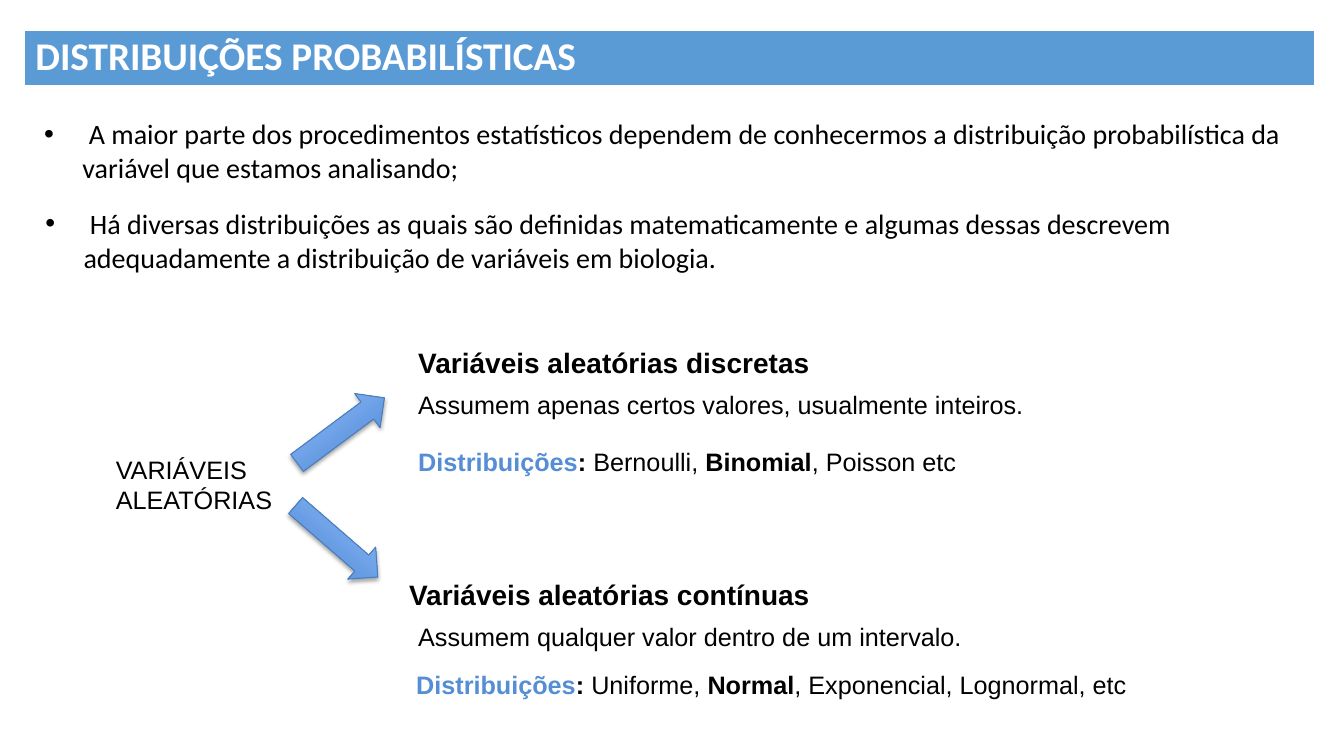
"""Build a slide that sorts random variables into discrete and continuous ones."""
from dataclasses import dataclass

import pptx
import pptx.dml.color
import pptx.enum.dml
import pptx.enum.shapes
import pptx.enum.text
import pptx.oxml
import pptx.oxml.ns
import pptx.util


@dataclass(frozen=True)
class Theme:
    """Colours, fonts and type sizes of the slide."""
    black: str = "000000"
    white: str = "FFFFFF"
    bar: str = "5B9BD5"
    label: str = "558ED5"
    edge: str = "4A7EBB"
    light: str = "9BC1FF"
    dark: str = "3F80CD"
    sans: str = "Arial"
    human: str = "Calibri"
    title: int = 28
    head: int = 20
    body: int = 18


THEME = Theme()
WIDTH = pptx.util.Inches(13.33)
HEIGHT = pptx.util.Inches(7.5)
SHADOW = (
    '<a:outerShdw xmlns:a="http://schemas.openxmlformats.org/drawingml/2006/main"'
    ' blurRad="39370" dist="22860" dir="5400000" rotWithShape="0">'
    '<a:srgbClr val="000000"><a:alpha val="35000"/></a:srgbClr></a:outerShdw>'
)


def paint(code):
    """Return the colour of a hex code."""
    return pptx.dml.color.RGBColor.from_string(code)


def area(left, top, width, height):
    """Turn percentages of the slide into left, top, width and height."""
    sides = (WIDTH, HEIGHT, WIDTH, HEIGHT)
    return [pptx.util.Emu(round(side * share / 100))
            for side, share in zip(sides, (left, top, width, height))]


def style(run, size, face=THEME.sans, tint=THEME.black, bold=False):
    """Format one run."""
    run.font.size = pptx.util.Pt(size)
    run.font.name = face
    run.font.bold = bold
    run.font.color.rgb = paint(tint)


def add_text(slide, place, text, size=THEME.body, face=THEME.sans, bold=False):
    """Add a wrapped text box and return its paragraph."""
    frame = slide.shapes.add_textbox(*area(*place)).text_frame
    frame.word_wrap = True
    frame.text = text
    line = frame.paragraphs[0]
    for run in line.runs:
        style(run, size, face, bold=bold)
    return line


def add_title(slide, place, text):
    """Fill the title and shape it as a bar."""
    title = slide.shapes.title
    title.left, title.top, title.width, title.height = area(*place)
    title.fill.solid()
    title.fill.fore_color.rgb = paint(THEME.bar)
    title.line.color.rgb = paint(THEME.bar)
    title.line.width = pptx.util.Pt(0.75)
    frame = title.text_frame
    frame.text = text
    frame.auto_size = pptx.enum.text.MSO_AUTO_SIZE.NONE
    frame.vertical_anchor = pptx.enum.text.MSO_ANCHOR.MIDDLE
    line = frame.paragraphs[0]
    line.alignment = pptx.enum.text.PP_ALIGN.LEFT
    line.line_spacing = 0.9
    style(line.runs[0], THEME.title, THEME.human, THEME.white, True)


def add_bullet(slide, place, text):
    """Add a bullet with a hanging indent."""
    line = add_text(slide, place, text, THEME.head, THEME.human)
    props = line._p.get_or_add_pPr()
    indent = pptx.util.Inches(0.38)
    props.set("marL", str(indent))
    props.set("indent", str(-indent))
    for tag, key, value in (("a:buFont", "typeface", THEME.sans),
                            ("a:buChar", "char", "•")):
        mark = pptx.oxml.ns.qn(tag)
        props.makeelement(mark)
        child = pptx.oxml.parse_xml(
            f'<{tag} xmlns:a="http://schemas.openxmlformats.org/drawingml/2006/main"'
            f' {key}="{value}"/>')
        props.append(child)


def add_arrow(slide, place, turn):
    """Add a turned block arrow with a gradient and a soft shadow."""
    arrow = slide.shapes.add_shape(
        pptx.enum.shapes.MSO_SHAPE.RIGHT_ARROW, *area(*place))
    arrow.rotation = turn
    arrow.fill.gradient()
    arrow.fill.gradient_angle = 270
    for stop, tint in zip(arrow.fill.gradient_stops, (THEME.light, THEME.dark)):
        stop.color.rgb = paint(tint)
    arrow.line.color.rgb = paint(THEME.edge)
    arrow.line.width = pptx.util.Pt(0.75)
    arrow.shadow.inherit = False
    effects = arrow._element.spPr.find(pptx.oxml.ns.qn("a:effectLst"))
    effects.append(pptx.oxml.parse_xml(SHADOW))


def add_kinds(slide, place, before, key, after):
    """Add a labelled list of distributions with one name in bold."""
    line = add_text(slide, place, "Distribuições", bold=True)
    line.runs[0].font.color.rgb = paint(THEME.label)
    for text, bold in ((": ", True), (before, False), (key, True), (after, False)):
        run = line.add_run()
        run.text = text
        style(run, THEME.body, bold=bold)


def main():
    """Build and save the slide."""
    deck = pptx.Presentation()
    deck.slide_width, deck.slide_height = WIDTH, HEIGHT
    slide = deck.slides.add_slide(deck.slide_layouts[5])

    add_title(slide, (1.88, 4.13, 95.87, 7.07), "DISTRIBUIÇÕES PROBABILÍSTICAS")
    add_bullet(slide, (2.55, 14.8, 95.2, 10.27),
               " A maior parte dos procedimentos estatísticos dependem de conhecermos"
               " a distribuição probabilística da variável que estamos analisando;")
    add_bullet(slide, (2.63, 26.67, 95.2, 10.27),
               " Há diversas distribuições as quais são definidas matematicamente e"
               " algumas dessas descrevem adequadamente a distribuição de variáveis"
               " em biologia.")

    add_text(slide, (7.88, 59.47, 16.28, 9.47), "VARIÁVEIS ALEATÓRIAS")
    add_arrow(slide, (21.3, 54.13, 8.1, 5.6), 323.3)
    add_arrow(slide, (21, 68.8, 8.1, 5.6), 41)

    add_text(slide, (30.38, 45.07, 45, 5.87), "Variáveis aleatórias discretas",
             THEME.head, bold=True)
    add_text(slide, (30.38, 50.8, 51, 5.33),
             "Assumem apenas certos valores, usualmente inteiros.")
    add_kinds(slide, (30.38, 58.4, 45, 5.33),
              "Bernoulli, ", "Binomial", ", Poisson etc")

    add_text(slide, (29.7, 75.73, 45, 5.87), "Variáveis aleatórias contínuas",
             THEME.head, bold=True)
    add_text(slide, (30.38, 81.47, 45, 5.33),
             "Assumem qualquer valor dentro de um intervalo.")
    add_kinds(slide, (30.23, 87.87, 63.84, 5.33),
              "Uniforme, ", "Normal", ", Exponencial, Lognormal, etc")
    deck.save("out.pptx")


if __name__ == "__main__":
    main()
